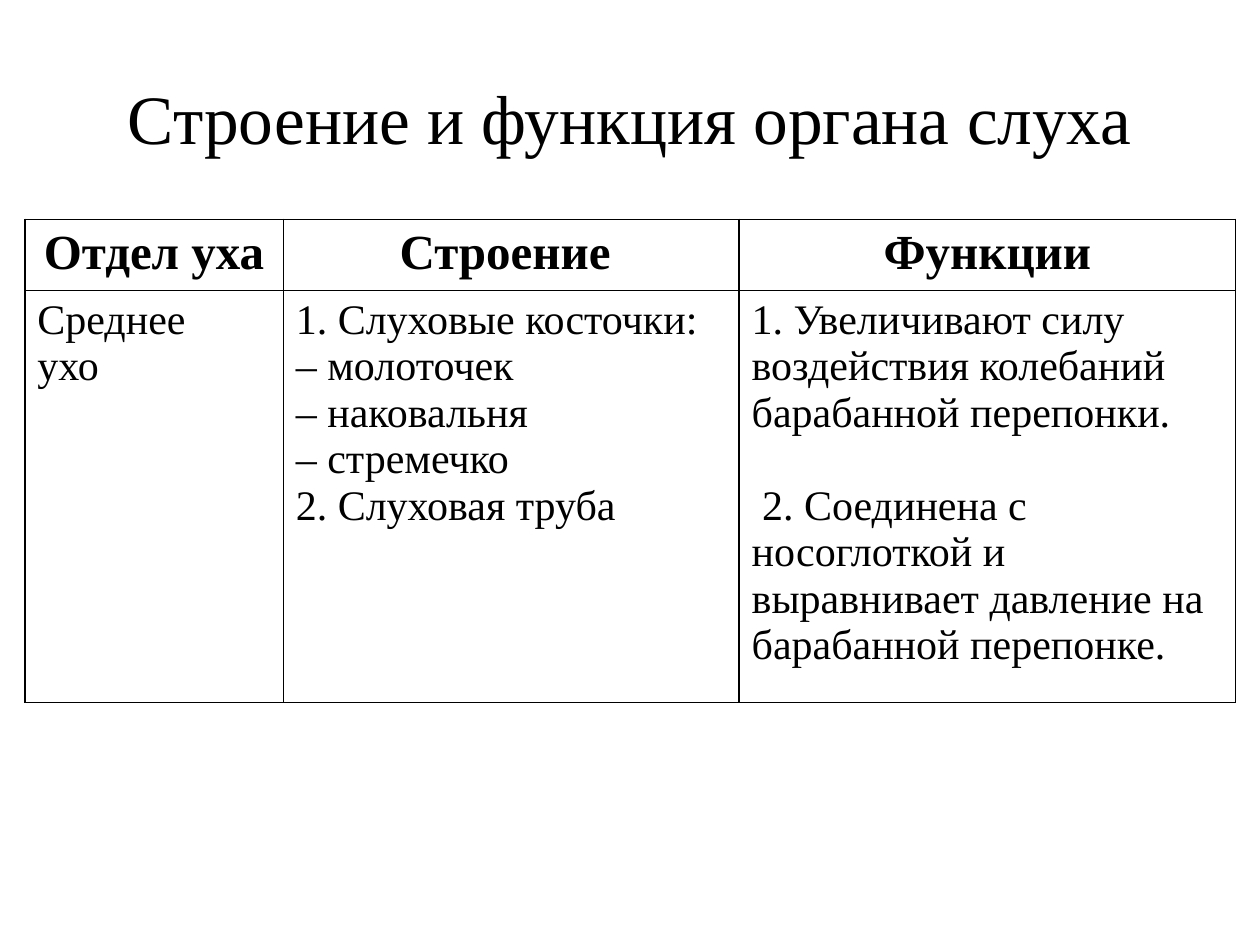
"""Build a slide with a table on the structure and function of the ear."""
import pptx
import pptx.dml.color
import pptx.enum.text
import pptx.oxml
import pptx.oxml.ns
import pptx.util
from dataclasses import dataclass

Cm = pptx.util.Cm
Pt = pptx.util.Pt
ALIGN = pptx.enum.text.PP_ALIGN
MIDDLE = pptx.enum.text.MSO_ANCHOR.MIDDLE

TITLE = "Строение и функция органа слуха"
HEADS = ["Отдел уха", "Строение ", "Функции"]
BODY = [
    ["Среднее", "ухо"],
    ["1. Слуховые косточки:\n– молоточек\n– наковальня\n– стремечко\n2. Слуховая труба"],
    [
        "1. Увеличивают силу воздействия колебаний барабанной перепонки.",
        "2. Соединена с носоглоткой и выравнивает давление на барабанной перепонке.",
    ],
]
WIDTHS = [5.21, 9.19, 10.01]
HEIGHTS = [1.42, 7.74]
GAPS = {(2, 1): {"space": 26.6, "indent": 0.21}}


@dataclass(frozen=True)
class Theme:
    face: str = "Times New Roman"
    ink: str = "000000"
    paper: str = "FFFFFF"
    title: float = 39.6
    head: float = 28
    body: float = 24
    rule: float = 1


LOOK = Theme()


def write(frame, lines, size, bold, align, gaps=None):
    style = {"name": LOOK.face, "size": Pt(size), "bold": bold}
    for num, line in enumerate(lines):
        para = frame.add_paragraph() if num else frame.paragraphs[0]
        para.text = line.replace("\n", "\v")
        para.alignment = align
        gap = (gaps or {}).get(num)
        if gap:
            para.space_before = Pt(gap["space"])
            para._p.get_or_add_pPr().set("indent", str(Cm(gap["indent"])))
        for run in para.runs:
            for key, value in style.items():
                setattr(run.font, key, value)
            run.font.color.rgb = pptx.dml.color.RGBColor.from_string(LOOK.ink)


def frame_cell(cell):
    props = cell._tc.get_or_add_tcPr()
    for side in "LRTB":
        props.append(pptx.oxml.parse_xml(
            f'<a:ln{side} {pptx.oxml.ns.nsdecls("a")} w="{Pt(LOOK.rule)}">'
            f'<a:solidFill><a:srgbClr val="{LOOK.ink}"/></a:solidFill></a:ln{side}>'
        ))
    cell.fill.solid()
    cell.fill.fore_color.rgb = pptx.dml.color.RGBColor.from_string(LOOK.paper)


def add_title(slide):
    frame = slide.shapes.add_textbox(Cm(1.27), Cm(0.76), Cm(22.86), Cm(3.18)).text_frame
    for key, value in {"word_wrap": True, "vertical_anchor": MIDDLE}.items():
        setattr(frame, key, value)
    write(frame, [TITLE], LOOK.title, False, ALIGN.CENTER)


def add_grid(slide):
    table = slide.shapes.add_table(
        len(HEIGHTS), len(WIDTHS), Cm(0.5), Cm(4.42), Cm(sum(WIDTHS)), Cm(sum(HEIGHTS))
    ).table
    for row, height in zip(table.rows, HEIGHTS):
        row.height = Cm(height)
    for col, width in enumerate(WIDTHS):
        table.columns[col].width = Cm(width)
        gaps = {num: gap for (place, num), gap in GAPS.items() if place == col}
        top, low = table.cell(0, col), table.cell(1, col)
        frame_cell(top)
        frame_cell(low)
        write(top.text_frame, [HEADS[col]], LOOK.head, True, ALIGN.CENTER)
        write(low.text_frame, BODY[col], LOOK.body, False, ALIGN.LEFT, gaps)


def main():
    deck = pptx.Presentation()
    deck.slide_width, deck.slide_height = Cm(25.4), Cm(19.05)
    slide = deck.slides.add_slide(deck.slide_layouts[6])
    add_title(slide)
    add_grid(slide)
    deck.save("out.pptx")


if __name__ == "__main__":
    main()
